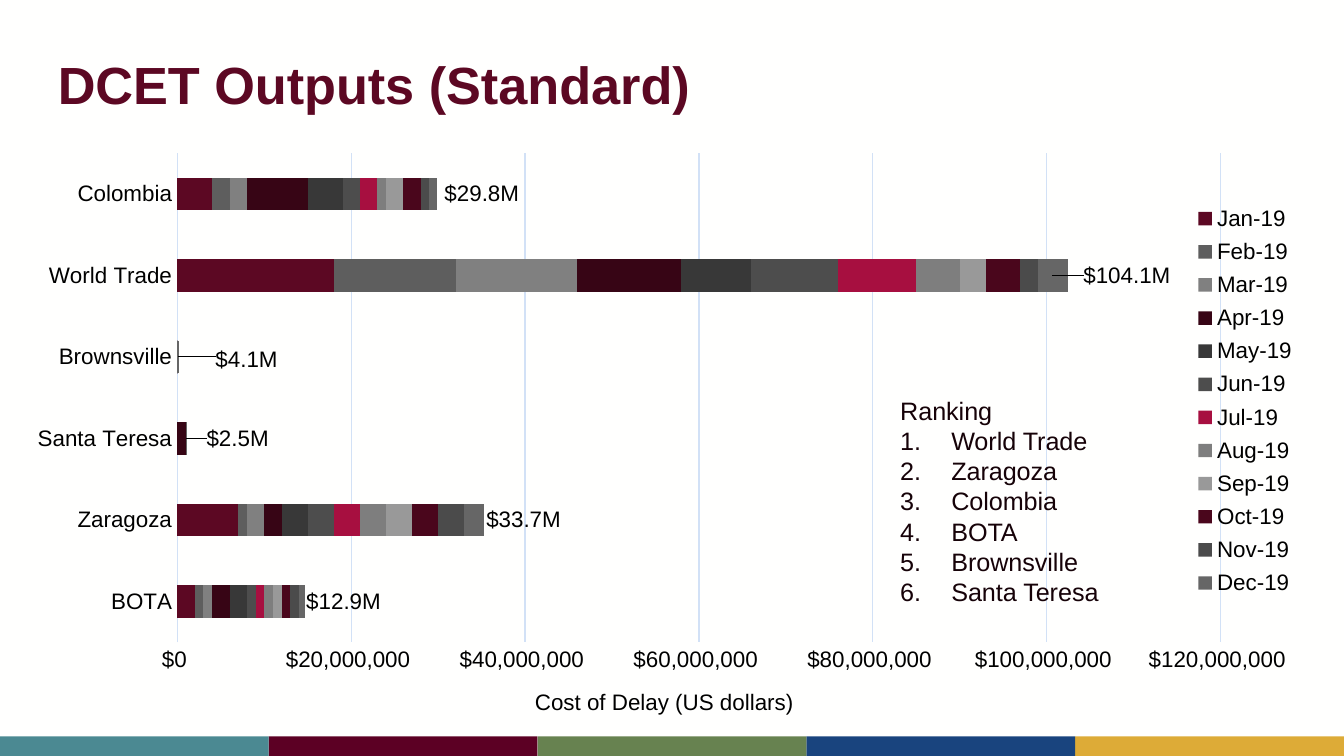
import pptx
import pptx.chart.data
import pptx.dml.color
import pptx.enum.chart
import pptx.enum.shapes
import pptx.enum.text
import pptx.oxml
import pptx.oxml.ns
import pptx.util

Inches = pptx.util.Inches
Pt = pptx.util.Pt

CHART_BOX = (0.12, 1, 9.77, 4.44)
MONEY = '"$"#,##0_);[Red]\\("$"#,##0\\)'
STRIPE_COLORS = ["4B8992", "5C0024", "678250", "19447E", "DDAB37"]
CROSSINGS = ["BOTA", "Zaragoza", "Santa Teresa", "Brownsville", "World Trade", "Colombia"]
MILLION = 1_000_000
# Month: colour, then the cost per crossing in whole millions of dollars
MONTHS = {
    "Jan-19": ("5C0823", [2, 7, 0, 0, 18, 4]),
    "Feb-19": ("5E5E5E", [1, 1, 0, 0, 14, 2]),
    "Mar-19": ("808080", [1, 2, 0, 0, 14, 2]),
    "Apr-19": ("370515", [2, 2, 1, 0, 12, 7]),
    "May-19": ("383838", [2, 3, 0, 0, 8, 4]),
    "Jun-19": ("4D4D4D", [1, 3, 0, 0, 10, 2]),
    "Jul-19": ("A70F40", [1, 3, 0, 0, 9, 2]),
    "Aug-19": ("7E7E7E", [1, 3, 0, 0, 5, 1]),
    "Sep-19": ("999999", [1, 3, 0, 0, 3, 2]),
    "Oct-19": ("4A061C", [1, 3, 0, 0, 4, 2]),
    "Nov-19": ("4B4B4B", [1, 3, 0, 0, 2, 1]),
}
# The last month carries the labels and is given in dollars
LAST_MONTH = "Dec-19"
LAST_COLOR = "666666"
LAST_COSTS = [655067, 2237674, 130177, 168139, 3500571, 926059]
# Total and its shift in inches from the middle of the last segment
TOTALS = [
    ("$12.9M", 0.31, 0), ("$33.7M", 0.37, 0), ("$2.5M", 0.38, 0),
    ("$4.1M", 0.51, 0.02), ("$104.1M", 0.55, 0), ("$29.8M", 0.36, 0),
]
RANKING = ["World Trade", "Zaragoza", "Colombia", "BOTA", "Brownsville", "Santa Teresa"]
NO_LEADER_LINES = (
    f'<c:extLst {pptx.oxml.ns.nsdecls("c")}><c:ext uri="{{CE6537A1-D6FC-4f65-9D91-7224C49458BB}}"'
    ' xmlns:c15="http://schemas.microsoft.com/office/drawing/2012/chart">'
    '<c15:showLeaderLines val="0"/></c:ext></c:extLst>')


def color(value):
    return pptx.dml.color.RGBColor.from_string(value)


def place(element, index, x, y, size=None, edge=True, inner=False):
    """Give a chart part a manual layout, measured in inches within the chart."""
    for old in element.findall(pptx.oxml.ns.qn("c:layout")):
        element.remove(old)
    width, height = CHART_BOX[2:]
    settings = [("layoutTarget", "inner")] if inner else []
    if edge:
        settings += [("xMode", "edge"), ("yMode", "edge")]
    settings += [("x", x / width), ("y", y / height)]
    if size:
        settings += [("w", size[0] / width), ("h", size[1] / height)]
    body = "".join(f'<c:{name} val="{value}"/>' for name, value in settings)
    element.insert(index, pptx.oxml.parse_xml(
        f'<c:layout {pptx.oxml.ns.nsdecls("c")}><c:manualLayout>{body}</c:manualLayout></c:layout>'))


class SlideBuilder:
    font_name = "Arial"
    title_color = "5C0823"
    text_color = "160208"
    chart_color = "000000"
    grid_color = "D2E1F6"

    def __init__(self, slide):
        self.slide = slide
        slide.background.fill.solid()
        slide.background.fill.fore_color.rgb = color("FFFFFE")

    def style(self, font, size, hex_color, bold=False):
        font.name = self.font_name
        font.size = Pt(size)
        font.bold = bold
        font.color.rgb = color(hex_color)

    def add_run(self, paragraph, text, size, hex_color, bold=False):
        run = paragraph.add_run()
        run.text = text
        self.style(run.font, size, hex_color, bold)

    def title(self, text, left, top, width, height):
        shape = self.slide.shapes.title
        shape.left, shape.top = Inches(left), Inches(top)
        shape.width, shape.height = Inches(width), Inches(height)
        shape.text_frame.vertical_anchor = pptx.enum.text.MSO_ANCHOR.MIDDLE
        paragraph = shape.text_frame.paragraphs[0]
        paragraph.alignment = pptx.enum.text.PP_ALIGN.LEFT
        paragraph.line_spacing = 0.9
        self.add_run(paragraph, text, 28, self.title_color, True)

    def master_stripe(self, left, top, width, height, fill):
        """Draw a plain bar and move it to the back of the slide master."""
        shape = self.slide.shapes.add_shape(
            pptx.enum.shapes.MSO_SHAPE.RECTANGLE,
            Inches(left), Inches(top), Inches(width), Inches(height))
        shape.shadow.inherit = False
        shape.fill.solid()
        shape.fill.fore_color.rgb = color(fill)
        shape.line.fill.background()
        master_tree = self.slide.slide_layout.slide_master.shapes._spTree
        shape._element.nvSpPr.cNvPr.set("id", str(100 + len(master_tree)))
        master_tree.insert(2, shape._element)

    def numbered_list(self, heading, items, left, top, width, height):
        box = self.slide.shapes.add_textbox(
            Inches(left), Inches(top), Inches(width), Inches(height))
        frame = box.text_frame
        frame.word_wrap = True
        frame.auto_size = pptx.enum.text.MSO_AUTO_SIZE.SHAPE_TO_FIT_TEXT
        self.add_run(frame.paragraphs[0], heading, 13.5, self.text_color)
        for item in items:
            paragraph = frame.add_paragraph()
            properties = paragraph._p.get_or_add_pPr()
            properties.set("marL", str(Inches(0.38)))
            properties.set("indent", str(-Inches(0.38)))
            properties.append(pptx.oxml.parse_xml(
                f'<a:buAutoNum {pptx.oxml.ns.nsdecls("a")} type="arabicPeriod"/>'))
            self.add_run(paragraph, item, 13.5, self.text_color)

    def stacked_bars(self):
        data = pptx.chart.data.CategoryChartData(number_format=MONEY)
        data.categories = CROSSINGS
        for month, (_, millions) in MONTHS.items():
            data.add_series(month, [value * MILLION for value in millions])
        data.add_series(LAST_MONTH, LAST_COSTS)
        chart = self.slide.shapes.add_chart(
            pptx.enum.chart.XL_CHART_TYPE.BAR_STACKED,
            *[Inches(length) for length in CHART_BOX], data).chart
        chart.has_title = False
        self.style(chart.font, 12, self.chart_color)
        plot = chart.plots[0]
        plot.gap_width = 150
        plot.overlap = 100
        plot.vary_by_categories = False
        fills = [fill for fill, _ in MONTHS.values()] + [LAST_COLOR]
        for series, fill in zip(plot.series, fills):
            series.invert_if_negative = False
            series.format.fill.solid()
            series.format.fill.fore_color.rgb = color(fill)
        place(chart._chartSpace.chart.plotArea, 0, 1.2, 0.14, (7.76, 3.64), inner=True)
        self.total_labels(plot.series[len(MONTHS)])
        self.axes(chart)
        self.legend(chart)

    def total_labels(self, series):
        labels = series.data_labels
        labels.show_value = True
        labels.number_format = MONEY
        labels.number_format_is_linked = False
        self.style(labels.font, 12, self.chart_color)
        for index, (text, right, down) in enumerate(TOTALS):
            label = series.points[index].data_label
            self.add_run(label.text_frame.paragraphs[0], text, 12, self.chart_color)
            place(label._get_or_add_dLbl(), 1, right, down, edge=False)
        labels._element.append(pptx.oxml.parse_xml(NO_LEADER_LINES))

    def axes(self, chart):
        no_ticks = pptx.enum.chart.XL_TICK_MARK.NONE
        values = chart.value_axis
        values.minimum_scale = 0
        values.maximum_scale = 120 * MILLION
        values.major_unit = 20 * MILLION
        values.tick_labels.number_format = MONEY
        values.tick_labels.number_format_is_linked = False
        values.format.line.fill.background()
        values.has_major_gridlines = True
        for line in (values.major_gridlines.format.line, chart.category_axis.format.line):
            line.color.rgb = color(self.grid_color)
            line.width = Pt(0.75)
        for axis in (values, chart.category_axis):
            axis.major_tick_mark = no_ticks
            axis.minor_tick_mark = no_ticks
            self.style(axis.tick_labels.font, 12, self.chart_color)
        title = values.axis_title
        paragraph = title.text_frame.paragraphs[0]
        self.add_run(paragraph, "Cost of Delay (US dollars)", 12, self.chart_color)
        place(title._element, 1, 3.83, 4.09)

    def legend(self, chart):
        chart.has_legend = True
        chart.legend.position = pptx.enum.chart.XL_LEGEND_POSITION.RIGHT
        chart.legend.include_in_layout = False
        self.style(chart.legend.font, 12, self.chart_color)
        place(chart.legend._element, 1, 8.72, 0.47, (0.85, 3.03))


def main():
    presentation = pptx.Presentation()
    presentation.slide_width = Inches(10)
    presentation.slide_height = Inches(10) * 9 // 16
    builder = SlideBuilder(presentation.slides.add_slide(presentation.slide_layouts[5]))
    for index, fill in enumerate(STRIPE_COLORS):
        builder.master_stripe(2 * index, 5.48, 2, 0.15, fill)
    builder.title("DCET Outputs (Standard)", 0.33, 0.3, 9.35, 0.7)
    builder.stacked_bars()
    builder.numbered_list("Ranking", RANKING, 6.6, 2.89, 2.1, 1.92)
    presentation.save("out.pptx")


if __name__ == "__main__":
    main()
